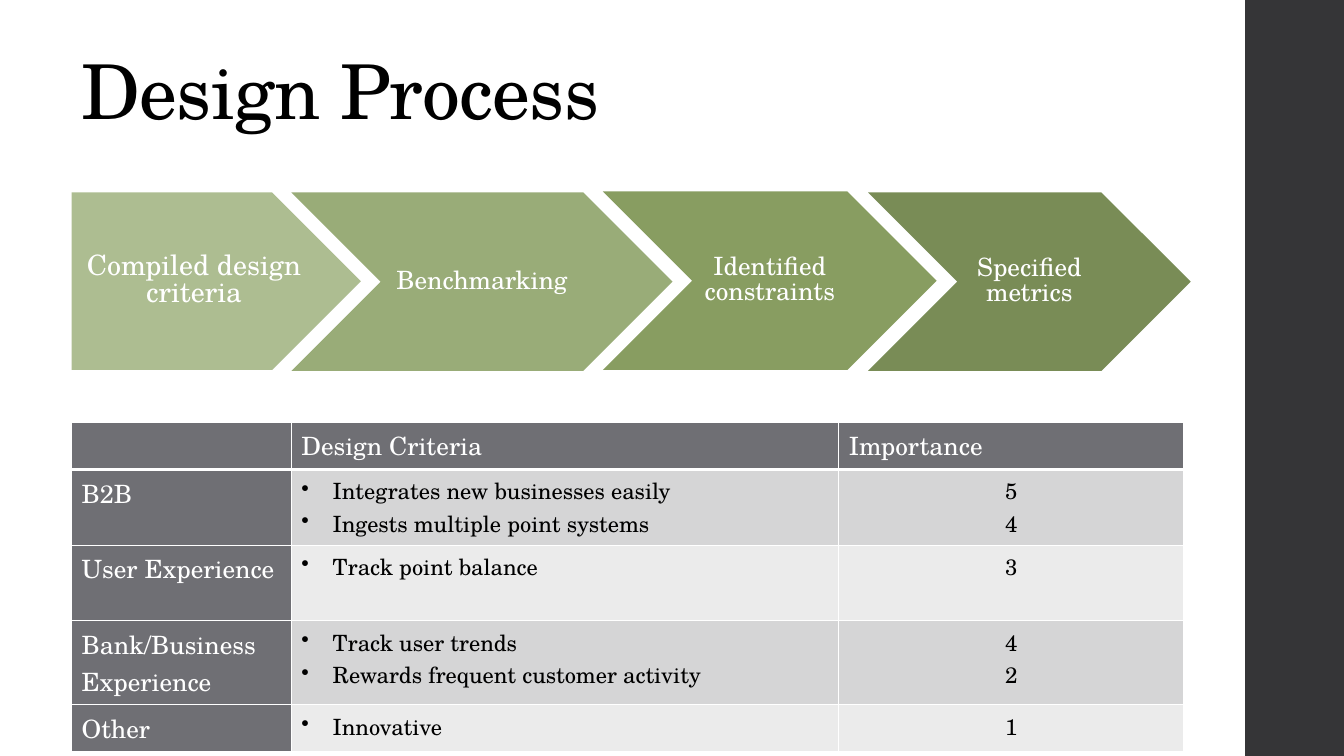
from pptx import Presentation
from pptx.util import Inches, Pt
from pptx.dml.color import RGBColor
from pptx.enum.shapes import MSO_SHAPE as Shape
from pptx.enum.text import MSO_ANCHOR as Anchor, MSO_AUTO_SIZE as AutoSize, PP_ALIGN as Align
from pptx.oxml.xmlchemy import OxmlElement


class Theme:
    font = "TeX Gyre Schola"
    white, black, sidebar = "FFFFFF", "000000", "353537"
    header, bands = "6F6F74", ("D5D5D6", "EBEBEB")
    title, large, label, body = 54, 20, 18, 16


# Content
TITLE = "Design Process"
# text, left, top, width, height, fill, text size
STEPS = [
    ("Compiled design criteria", 0.71, 1.91, 2.87, 1.76, "ADBD91", Theme.large),
    ("Benchmarking", 2.89, 1.91, 3.78, 1.77, "99AC78", Theme.label),
    ("Identified constraints", 5.98, 1.9, 3.31, 1.77, "889D61", Theme.label),
    ("Specified metrics", 8.61, 1.91, 3.2, 1.77, "798C56", Theme.label),
]
HEADINGS = ["", "Design Criteria", "Importance"]
# group, [(criterion, importance)], row height
CRITERIA = [
    ("B2B", [("Integrates new businesses easily", "5"),
             ("Ingests multiple point systems", "4")], 0.74),
    ("User Experience", [("Track point balance", "3")], 0.75),
    ("Bank/Business Experience", [("Track user trends", "4"),
                                  ("Rewards frequent customer activity", "2")], 0.83),
    ("Other", [("Innovative", "1")], 0.46),
]
COL_WIDTHS = [2.18, 5.43, 3.42]
HEADER_HEIGHT = 0.46


def rgb(value):
    return RGBColor.from_string(value)


def add_run(p, text, size, color):
    r = p.add_run()
    r.text = text
    r.font.name, r.font.size = Theme.font, Pt(size)
    r.font.color.rgb = rgb(color)
    return r


def add_block(slide, kind, box, fill):
    sp = slide.shapes.add_shape(kind, *map(Inches, box))
    sp.shadow.inherit = False
    sp.fill.solid()
    sp.fill.fore_color.rgb = rgb(fill)
    sp.line.fill.background()
    return sp


def add_bullet(p):
    pPr = p._p.get_or_add_pPr()
    pPr.set("marL", str(Inches(0.31)))
    pPr.set("indent", str(-Inches(0.31)))
    bullet = OxmlElement("a:buChar")
    bullet.set("char", "•")
    pPr.append(bullet)


def set_borders(cell, bottom):
    tcPr = cell._tc.get_or_add_tcPr()
    for i, (side, width) in enumerate([("L", 1), ("R", 1), ("T", 1), ("B", bottom)]):
        line = OxmlElement(f"a:ln{side}")
        line.set("w", str(Pt(width)))
        fill, color = OxmlElement("a:solidFill"), OxmlElement("a:srgbClr")
        color.set("val", Theme.white)
        fill.append(color)
        line.append(fill)
        tcPr.insert(i, line)


def fill_cell(cell, lines, size, color, fill, bottom=1, bullets=False, align=Align.LEFT):
    cell.fill.solid()
    cell.fill.fore_color.rgb = rgb(fill)
    set_borders(cell, bottom)
    tf = cell.text_frame
    for i, text in enumerate(lines):
        p = tf.add_paragraph() if i else tf.paragraphs[0]
        p.alignment = align
        if bullets:
            add_bullet(p)
        if text:
            add_run(p, text, size, color)


def add_title(slide):
    title = slide.shapes.title
    title.left, title.top, title.width, title.height = map(Inches, (0.71, 0.39, 8.29, 1.01))
    tf = title.text_frame
    tf.auto_size, tf.vertical_anchor = AutoSize.NONE, Anchor.BOTTOM
    p = tf.paragraphs[0]
    p.alignment, p.line_spacing = Align.LEFT, 0.9
    r = add_run(p, TITLE, Theme.title, Theme.black)
    r.font._element.set("spc", "-50")


def add_steps(slide):
    for i, (text, *box, fill, size) in enumerate(STEPS):
        sp = add_block(slide, Shape.CHEVRON if i else Shape.PENTAGON, box, fill)
        tf = sp.text_frame
        tf.word_wrap, tf.vertical_anchor = True, Anchor.MIDDLE
        p = tf.paragraphs[0]
        p.alignment, p.line_spacing = Align.CENTER, 0.81
        add_run(p, text, size, Theme.white)


def add_criteria_table(slide):
    heights = [HEADER_HEIGHT] + [height for *_, height in CRITERIA]
    box = (0.71, 4.19, sum(COL_WIDTHS), sum(heights))
    table = slide.shapes.add_table(len(heights), len(COL_WIDTHS), *map(Inches, box)).table
    table.first_row = table.horz_banding = False
    for col, width in zip(table.columns, COL_WIDTHS):
        col.width = Inches(width)
    for row, height in zip(table.rows, heights):
        row.height = Inches(height)

    for c, heading in enumerate(HEADINGS):
        fill_cell(table.cell(0, c), [heading], Theme.label, Theme.white, Theme.header, bottom=3)
    for i, (group, items, _) in enumerate(CRITERIA):
        names, scores = zip(*items)
        band = Theme.bands[i % 2]
        group_cell, name_cell, score_cell = table.rows[i + 1].cells
        fill_cell(group_cell, [group], Theme.label, Theme.white, Theme.header)
        fill_cell(name_cell, names, Theme.body, Theme.black, band, bullets=True)
        fill_cell(score_cell, scores, Theme.body, Theme.black, band, align=Align.CENTER)


def main():
    prs = Presentation()
    prs.slide_width, prs.slide_height = Inches(13.33), Inches(7.5)
    s = prs.slides.add_slide(prs.slide_layouts[5])
    s.background.fill.solid()
    s.background.fill.fore_color.rgb = rgb(Theme.white)

    # Sidebar, heading, criteria table and process arrows
    add_block(s, Shape.RECTANGLE, (12.35, 0, 0.98, 7.5), Theme.sidebar)
    add_title(s)
    add_criteria_table(s)
    add_steps(s)
    prs.save("out.pptx")


if __name__ == "__main__":
    main()
